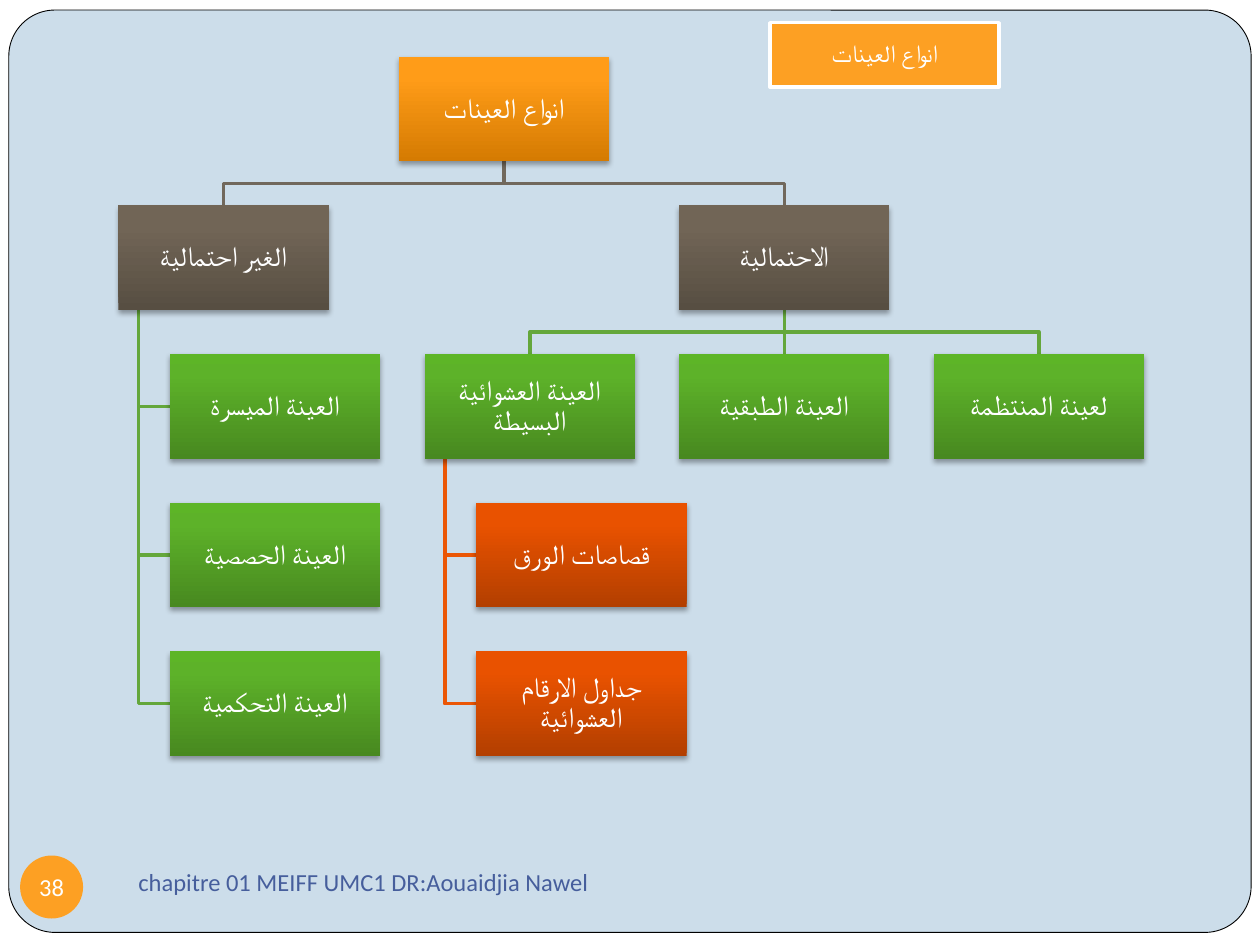
from copy import deepcopy

from lxml.etree import SubElement
from pptx import Presentation
from pptx.dml.color import RGBColor
from pptx.enum.shapes import MSO_CONNECTOR, MSO_SHAPE
from pptx.enum.text import MSO_ANCHOR, PP_ALIGN
from pptx.oxml import parse_xml
from pptx.oxml.ns import nsdecls, qn
from pptx.util import Inches, Pt

WHITE = RGBColor(0xFF, 0xFF, 0xFF)
BLACK = RGBColor(0x00, 0x00, 0x00)
PALE_BLUE = RGBColor(0xCC, 0xDD, 0xEA)
FOOTER_BLUE = RGBColor(0x46, 0x5E, 0x9C)
ORANGE = RGBColor(0xFD, 0xA0, 0x23)
BROWN_LINE = RGBColor(0x71, 0x68, 0x5C)
GREEN_LINE = RGBColor(0x64, 0xA7, 0x3B)
RED_LINE = RGBColor(0xEB, 0x56, 0x05)

# Gradient colours from bottom to top, at STOPS
STOPS = (0, 0.8, 1)
ORANGE_FADE = (RGBColor(0xD5, 0x7B, 0x02), RGBColor(0xFF, 0x9C, 0x18), RGBColor(0xFF, 0x9D, 0x19))
BROWN_FADE = (RGBColor(0x57, 0x4E, 0x42), RGBColor(0x71, 0x65, 0x56), RGBColor(0x72, 0x66, 0x56))
GREEN_FADE = (RGBColor(0x48, 0x89, 0x20), RGBColor(0x5D, 0xB2, 0x29), RGBColor(0x5D, 0xB5, 0x27))
RED_FADE = (RGBColor(0xB3, 0x3F, 0x00), RGBColor(0xE9, 0x52, 0x00), RGBColor(0xEA, 0x52, 0x00))

BOX_WIDTH, BOX_HEIGHT = 1.67, 0.83
INDENT, SPINE = 0.41, 0.16
ROWS = [0.45 + 1.18 * row for row in range(5)]
COLUMNS = [1.35 + 2.02 * column for column in range(4)]

BOX_SHADOW = (
    f'<a:effectLst {nsdecls("a")}><a:outerShdw blurRad="39370" dist="22860" dir="5400000" '
    'rotWithShape="0"><a:srgbClr val="000000"><a:alpha val="35000"/></a:srgbClr>'
    '</a:outerShdw></a:effectLst>'
)


class SlideBuilder:
    font = "Calibri"
    line_width = Pt(2)

    def __init__(self, slide):
        self.slide = slide
        self.shapes = slide.shapes

    def background(self, color):
        fill = self.slide.background.fill
        fill.solid()
        fill.fore_color.rgb = color

    def shape(self, kind, left, top, width, height, color, line=None, line_width=line_width):
        shape = self.shapes.add_shape(kind, Inches(left), Inches(top), Inches(width), Inches(height))
        shape.shadow.inherit = False
        shape.fill.solid()
        shape.fill.fore_color.rgb = color
        if line is None:
            shape.line.fill.background()
        else:
            shape.line.color.rgb = line
            shape.line.width = line_width
        return shape

    def text(self, shape, text, size, color=WHITE, align=PP_ALIGN.CENTER,
             inset=None, spacing=None, wrap=True):
        frame = shape.text_frame
        frame.word_wrap = wrap
        frame.vertical_anchor = MSO_ANCHOR.MIDDLE
        if inset is not None:
            frame.margin_left = frame.margin_right = Inches(inset)
            frame.margin_top = frame.margin_bottom = Inches(inset)
        paragraph = frame.paragraphs[0]
        paragraph.alignment = align
        paragraph.line_spacing = spacing
        run = paragraph.add_run()
        run.text = text
        run.font.size = Pt(size)
        run.font.name = self.font
        run.font.color.rgb = color
        SubElement(run.font._element, qn("a:cs"), typeface=self.font)

    def text_box(self, left, top, width, height, text, size, color):
        box = self.shapes.add_textbox(Inches(left), Inches(top), Inches(width), Inches(height))
        self.text(box, text, size, color, PP_ALIGN.LEFT)

    def tree_box(self, left, top, text, fade):
        box = self.shape(MSO_SHAPE.RECTANGLE, left, top, BOX_WIDTH, BOX_HEIGHT, fade[0])
        box.fill.gradient()
        box.fill.gradient_angle = 90
        properties = box._element.spPr
        stop_list = properties.find(".//" + qn("a:gsLst"))
        stop_list.append(deepcopy(stop_list[-1]))
        for stop, position, color in zip(box.fill.gradient_stops, STOPS, fade):
            stop.position = position
            stop.color.rgb = color
        properties.replace(properties.find(qn("a:effectLst")), parse_xml(BOX_SHADOW))
        self.text(box, text, 16, inset=0.01, spacing=0.9)

    def elbow(self, points, color):
        start, *others = [(Inches(x), Inches(y)) for x, y in points]
        builder = self.shapes.build_freeform(*start)
        builder.add_line_segments(others, close=False)
        shape = builder.convert_to_shape()
        shape.shadow.inherit = False
        shape.fill.background()
        shape.line.color.rgb = color
        shape.line.width = self.line_width

    def straight(self, start, end, color):
        points = [Inches(value) for value in (*start, *end)]
        connector = self.shapes.add_connector(MSO_CONNECTOR.STRAIGHT, *points)
        connector.line.color.rgb = color
        connector.line.width = self.line_width
        SubElement(connector._element.spPr, qn("a:effectLst"))

    def drop(self, parent, child, color):
        """Join the bottom centre of the parent to the top centre of the child."""
        start_x, end_x = parent[0] + BOX_WIDTH / 2, child[0] + BOX_WIDTH / 2
        start_y, end_y = parent[1] + BOX_HEIGHT, child[1]
        if start_x == end_x:
            self.straight((start_x, start_y), (end_x, end_y), color)
            return
        middle = (start_y + end_y) / 2
        self.elbow([(start_x, start_y), (start_x, middle), (end_x, middle), (end_x, end_y)], color)

    def hang(self, parent, child, color):
        """Join the lower left of the parent to the left side of the child."""
        x, y = parent[0] + SPINE, child[1] + BOX_HEIGHT / 2
        self.elbow([(x, parent[1] + BOX_HEIGHT), (x, y), (child[0], y)], color)


def build_tree(builder):
    non_probability = (COLUMNS[0] - INDENT, ROWS[1])
    probability = (COLUMNS[2], ROWS[1])
    root = ((non_probability[0] + probability[0]) / 2, ROWS[0])
    simple_random = (COLUMNS[1], ROWS[2])
    probability_kinds = [(column, ROWS[2]) for column in COLUMNS[1:]]
    non_probability_kinds = [(COLUMNS[0], row) for row in ROWS[2:]]
    random_methods = [(COLUMNS[1] + INDENT, row) for row in ROWS[3:]]

    for child in probability_kinds:
        builder.drop(probability, child, GREEN_LINE)
    for child in random_methods:
        builder.hang(simple_random, child, RED_LINE)
    for child in non_probability_kinds:
        builder.hang(non_probability, child, GREEN_LINE)
    for child in (probability, non_probability):
        builder.drop(root, child, BROWN_LINE)

    levels = [
        (ORANGE_FADE, [root], ["انواع العينات"]),
        (BROWN_FADE, [non_probability, probability], ["الغير احتمالية", "الاحتمالية"]),
        (GREEN_FADE, non_probability_kinds,
         ["العينة الميسرة", "العينة الحصصية", "العينة التحكمية"]),
        (GREEN_FADE, probability_kinds,
         ["العينة العشوائية البسيطة", "العينة الطبقية", "لعينة المنتظمة"]),
        (RED_FADE, random_methods, ["قصاصات الورق", "جداول الارقام العشوائية"]),
    ]
    for fade, places, labels in levels:
        for (left, top), label in zip(places, labels):
            builder.tree_box(left, top, label, fade)


def main():
    presentation = Presentation()
    presentation.slide_width = Inches(10)
    presentation.slide_height = Inches(7.5)
    builder = SlideBuilder(presentation.slides.add_slide(presentation.slide_layouts[6]))

    builder.background(PALE_BLUE)
    builder.shape(MSO_SHAPE.RECTANGLE, 0, 0, 10, 7.5, WHITE)
    panel = builder.shape(MSO_SHAPE.ROUNDED_RECTANGLE, 0.07, 0.08, 9.86, 7.32,
                          PALE_BLUE, BLACK, Pt(0.5))
    panel.adjustments[0] = 0.05
    builder.text_box(1, 6.75, 4.33, 0.5, "chapitre 01 MEIFF UMC1 DR:Aouaidjia Nawel", 14, FOOTER_BLUE)
    page_number = builder.shape(MSO_SHAPE.OVAL, 0.16, 6.79, 0.5, 0.5, ORANGE)
    builder.text(page_number, "38", 14, inset=0, wrap=False)

    build_tree(builder)

    title = builder.shape(MSO_SHAPE.RECTANGLE, 6.11, 0.18, 1.82, 0.51, ORANGE, WHITE)
    builder.text(title, "انواع العينات", 14, inset=0.01, spacing=0.9)
    presentation.save("out.pptx")


if __name__ == "__main__":
    main()
